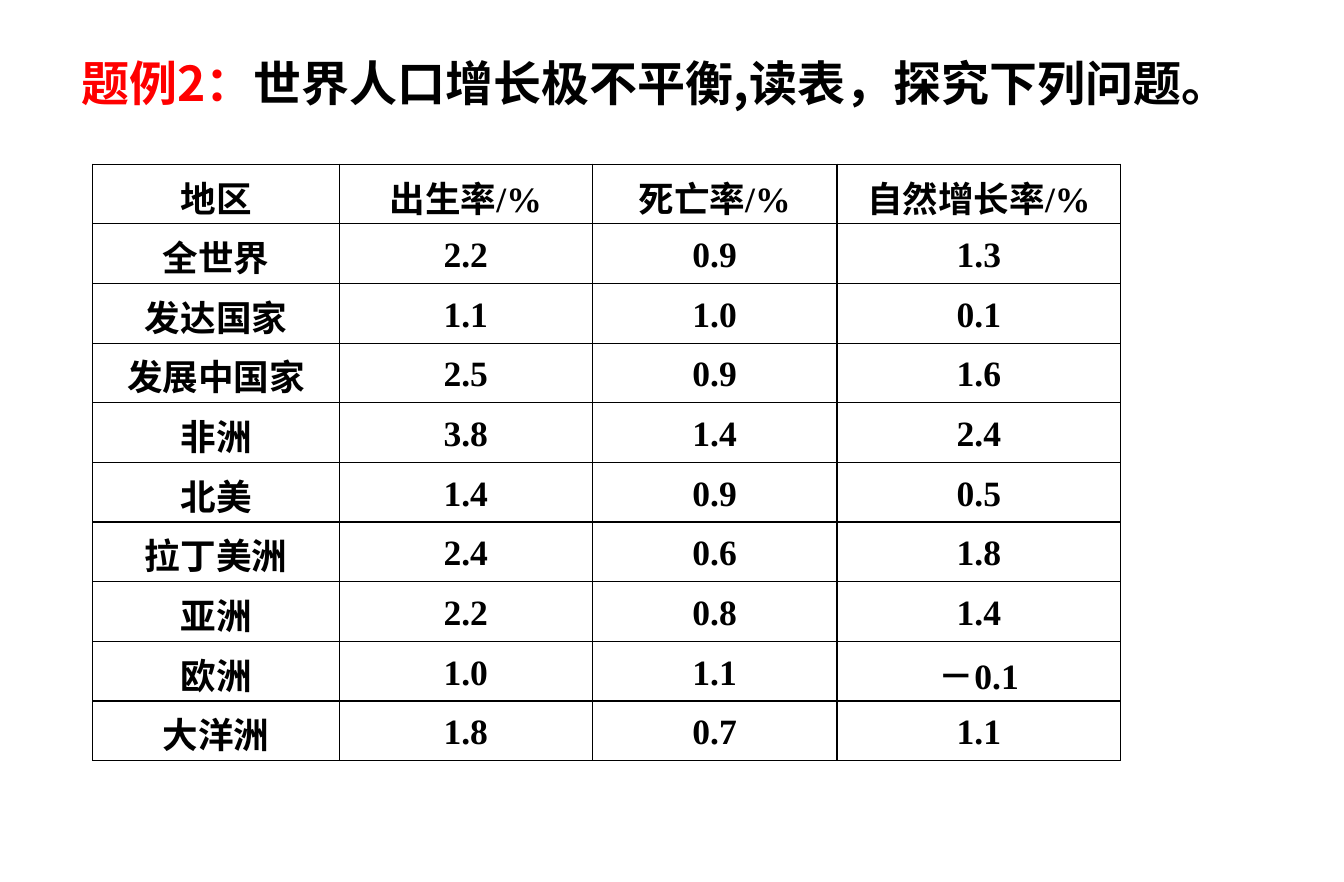
import pptx
import pptx.util
import pptx.dml.color
import pptx.enum.text
import pptx.oxml
import pptx.oxml.ns
from lxml import etree

Cm, Pt = pptx.util.Cm, pptx.util.Pt
ALIGN = pptx.enum.text.PP_ALIGN
MIDDLE = pptx.enum.text.MSO_ANCHOR.MIDDLE
qn = pptx.oxml.ns.qn
COLORS = {"black": "000000", "red": "FF0000"}
CJK = "Noto Sans CJK SC"


def add_text(p, text, size, font=CJK, color="black"):
    r = p.add_run()
    r.text = text
    r.font.size = Pt(size)
    r.font.bold = True
    r.font.color.rgb = pptx.dml.color.RGBColor.from_string(COLORS[color])
    r.font.name = font
    etree.SubElement(r.font._element, qn("a:ea")).set("typeface", CJK)


def add_borders(cell, color="black", width=1):
    tcPr = cell._tc.get_or_add_tcPr()
    for i, side in enumerate(("lnL", "lnR", "lnT", "lnB")):
        ln = etree.Element(qn(f"a:{side}"), w=str(Pt(width)))
        fill = etree.SubElement(ln, qn("a:solidFill"))
        etree.SubElement(fill, qn("a:srgbClr")).set("val", COLORS[color])
        tcPr.insert(i, ln)


prs = pptx.Presentation()
prs.slide_width, prs.slide_height = Cm(32), Cm(21)
s = prs.slides.add_slide(prs.slide_layouts[5])

title = s.shapes.title
title.left, title.top, title.width, title.height = Cm(1.6), Cm(0.84), Cm(28.8), Cm(2.26)
tf = title.text_frame
tf.word_wrap = True
tf.auto_size = pptx.enum.text.MSO_AUTO_SIZE.NONE
tf.vertical_anchor = MIDDLE
tf.margin_left = tf.margin_right = Cm(0.33)
tf.margin_top = tf.margin_bottom = Cm(0.15)
p = tf.paragraphs[0]
p.alignment = ALIGN.LEFT
add_text(p, "题例2：", 32.4, color="red")
add_text(p, "世界人口增长极不平衡,读表，探究下列问题。", 32.4)

rows = [
    ("地区", "出生率/%", "死亡率/%", "自然增长率/%"),
    ("全世界", "2.2", "0.9", "1.3"),
    ("发达国家", "1.1", "1.0", "0.1"),
    ("发展中国家", "2.5", "0.9", "1.6"),
    ("非洲", "3.8", "1.4", "2.4"),
    ("北美", "1.4", "0.9", "0.5"),
    ("拉丁美洲", "2.4", "0.6", "1.8"),
    ("亚洲", "2.2", "0.8", "1.4"),
    ("欧洲", "1.0", "1.1", "－0.1"),
    ("大洋洲", "1.8", "0.7", "1.1"),
]
col_widths = [5.87, 6.02, 5.83, 6.75]
row_height = 1.42
table = s.shapes.add_table(len(rows), len(col_widths), Cm(2.21), Cm(3.91),
                           Cm(sum(col_widths)), Cm(row_height * len(rows))).table
table.first_row = table.horz_banding = False
for col, width in zip(table.columns, col_widths):
    col.width = Cm(width)
for i, values in enumerate(rows):
    table.rows[i].height = Cm(row_height)
    for j, value in enumerate(values):
        cell = table.cell(i, j)
        cell.fill.background()
        cell.vertical_anchor = MIDDLE
        cell.margin_left = cell.margin_right = Cm(0.15)
        cell.margin_top = cell.margin_bottom = 0
        add_borders(cell)
        p = cell.text_frame.paragraphs[0]
        p.alignment = ALIGN.CENTER
        p.line_spacing = 1.1
        add_text(p, value, 24, font="Times New Roman")

prs.save("out.pptx")
